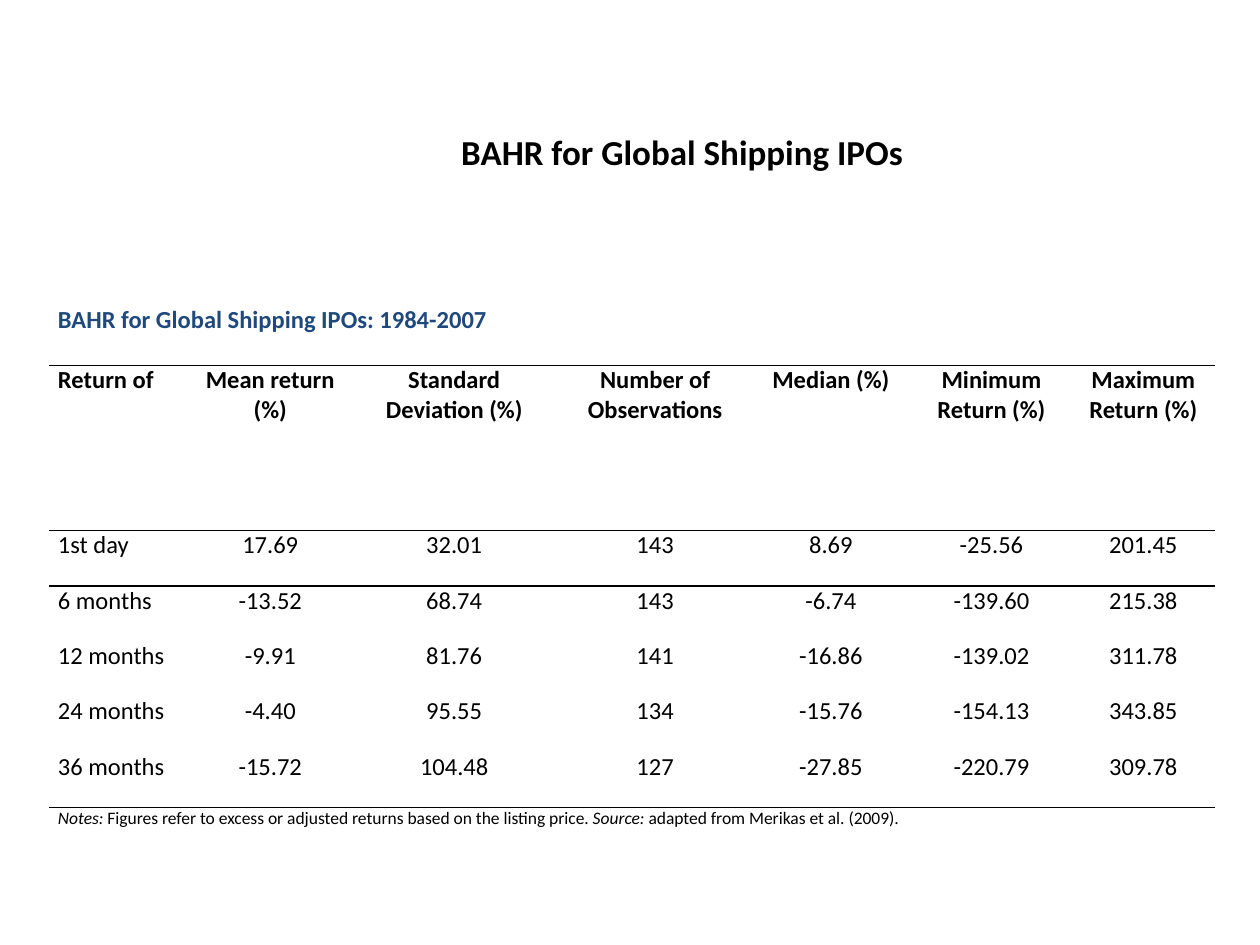
from lxml import etree
from pptx import Presentation
from pptx.dml.color import RGBColor
from pptx.enum.text import MSO_ANCHOR, PP_ALIGN
from pptx.oxml.ns import qn
from pptx.util import Inches, Pt

LEFT, CENTER, JUSTIFY = PP_ALIGN.LEFT, PP_ALIGN.CENTER, PP_ALIGN.JUSTIFY
MIDDLE = MSO_ANCHOR.MIDDLE
BLACK = RGBColor(0x00, 0x00, 0x00)
NAVY = RGBColor(0x1F, 0x49, 0x7D)
NO_GRID_STYLE = "{2D5ABB26-0587-4C30-8999-92F81FD0307C}"

COLUMN_WIDTHS = [1.13, 1.25, 1.67, 1.52, 1.27, 1.28, 1.13]
ROW_HEIGHTS = [0.48, 1.31] + [0.44] * 5 + [0.39]
CAPTION = "BAHR for Global Shipping IPOs: 1984-2007"
HEADERS = ["Return of", "Mean return (%)", "Standard Deviation (%)", "Number of Observations",
           "Median (%)", "Minimum Return (%)", "Maximum Return (%)"]
RETURNS = [
    ["1st day", "17.69", "32.01", "143", "8.69", "-25.56", "201.45"],
    ["6 months", "-13.52", "68.74", "143", "-6.74", "-139.60", "215.38"],
    ["12 months", "-9.91", "81.76", "141", "-16.86", "-139.02", "311.78"],
    ["24 months", "-4.40", "95.55", "134", "-15.76", "-154.13", "343.85"],
    ["36 months", "-15.72", "104.48", "127", "-27.85", "-220.79", "309.78"],
]
NOTES = [("Notes:", True),
         (" Figures refer to excess or adjusted returns based on the listing price.", False),
         (" Source:", True),
         (" adapted from Merikas et al. (2009).", False)]
RULED_ROWS = {0, 1, 6}  # rows with a line below them


def write_text(frame, text, size=14, color=BLACK, bold=False, italic=False, align=LEFT):
    """Append a formatted run to the first paragraph of the frame."""
    paragraph = frame.paragraphs[0]
    paragraph.alignment = align
    run = paragraph.add_run()
    run.text = text
    font = run.font
    font.name, font.size, font.bold, font.italic = "Calibri", Pt(size), bold, italic
    font.color.rgb = color


def add_border(cell, tag):
    line = etree.SubElement(cell._tc.get_or_add_tcPr(), qn(tag), w=str(Pt(1)))
    fill = etree.SubElement(line, qn("a:solidFill"))
    etree.SubElement(fill, qn("a:srgbClr"), val=str(BLACK))


presentation = Presentation()
presentation.slide_width = Inches(10)
presentation.slide_height = Inches(7.5)
slide = presentation.slides.add_slide(presentation.slide_layouts[6])

title = slide.shapes.add_textbox(Inches(0.95), Inches(0.98), Inches(8.93), Inches(0.44))
title.text_frame.word_wrap = True
title.text_frame.vertical_anchor = MIDDLE
write_text(title.text_frame, "BAHR for Global Shipping IPOs", size=20, bold=True, align=CENTER)

table = slide.shapes.add_table(
    len(ROW_HEIGHTS), len(COLUMN_WIDTHS), Inches(0.39), Inches(2.42),
    Inches(sum(COLUMN_WIDTHS)), Inches(sum(ROW_HEIGHTS))).table
table.first_row = table.horz_banding = False
table._tbl.tblPr.find(qn("a:tableStyleId")).text = NO_GRID_STYLE
for column, width in zip(table.columns, COLUMN_WIDTHS):
    column.width = Inches(width)

for row_index, (row, height) in enumerate(zip(table.rows, ROW_HEIGHTS)):
    row.height = Inches(height)
    for cell in row.cells:
        cell.margin_left = cell.margin_right = Inches(0.07)
        cell.margin_top = cell.margin_bottom = 0
        if row_index - 1 in RULED_ROWS:
            add_border(cell, "a:lnT")
        if row_index in RULED_ROWS:
            add_border(cell, "a:lnB")
        cell.fill.background()

last_row, last_column = len(ROW_HEIGHTS) - 1, len(COLUMN_WIDTHS) - 1
for row_index in (0, last_row):
    table.cell(row_index, 0).merge(table.cell(row_index, last_column))

write_text(table.cell(0, 0).text_frame, CAPTION, color=NAVY, bold=True, align=JUSTIFY)
for row_index, values in enumerate([HEADERS] + RETURNS, start=1):
    is_header = row_index == 1
    for column_index, value in enumerate(values):
        label_align = LEFT if is_header else JUSTIFY
        write_text(table.cell(row_index, column_index).text_frame, value, bold=is_header,
                   align=CENTER if column_index else label_align)
for text, italic in NOTES:
    write_text(table.cell(last_row, 0).text_frame, text, size=10, italic=italic)

presentation.save("out.pptx")
